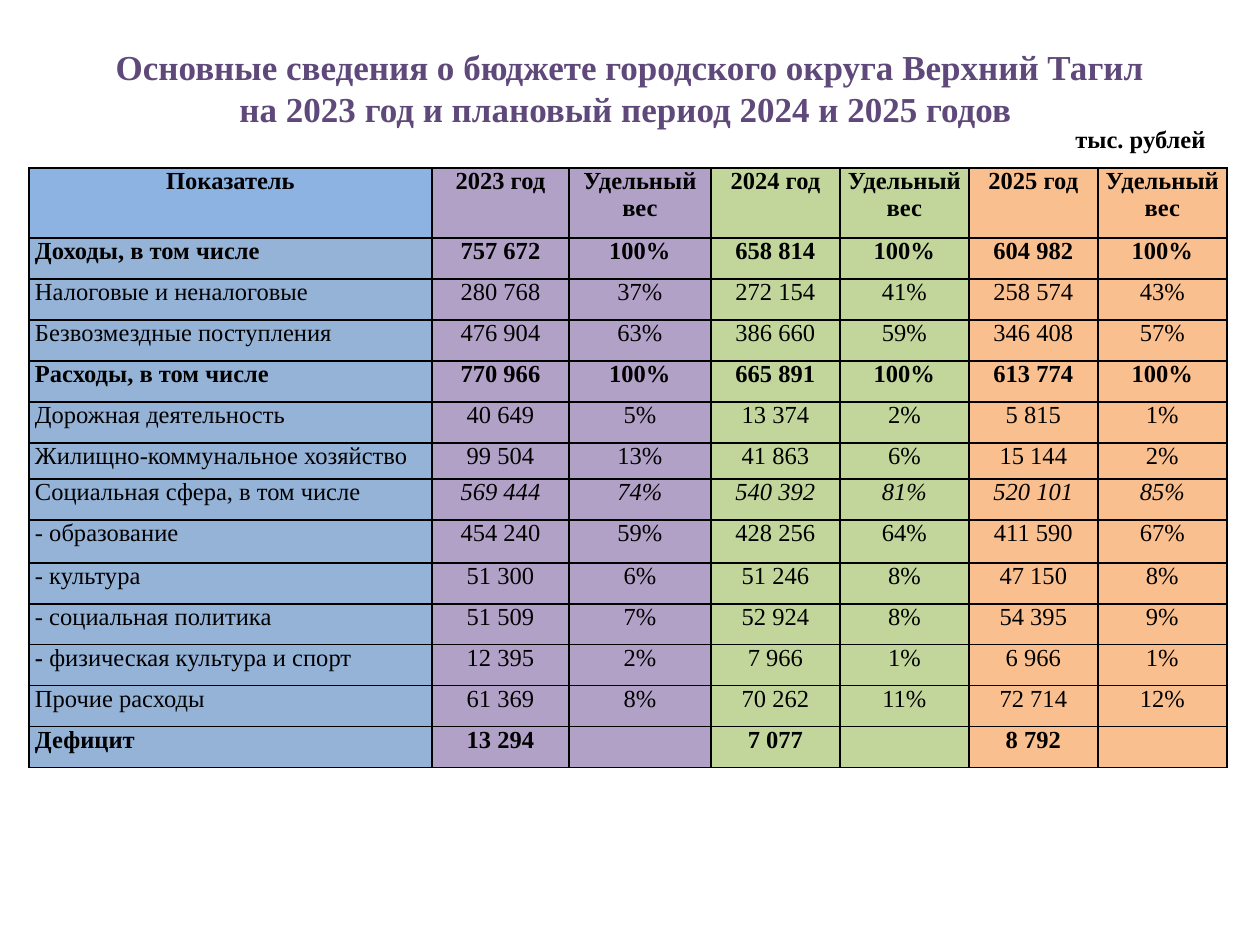
from dataclasses import dataclass

from lxml import etree
from pptx import Presentation
from pptx import util as u
from pptx.dml.color import RGBColor
from pptx.enum import text
from pptx.oxml.ns import qn

PX = 914400 / 126


@dataclass(frozen=True)
class Theme:
    """Colours, font and type sizes of the slide."""
    font: str = "Times New Roman"
    title: str = "5F497A"
    ink: str = "000000"
    head: str = "8DB3E2"
    label: str = "95B3D7"
    years: tuple = ("B2A1C7", "C2D69B", "FABF8F")
    title_pt: int = 20
    body_pt: int = 14
    border_pt: int = 1


T = Theme()
TITLE = ["Основные сведения о бюджете городского округа Верхний Тагил",
         "на 2023 год и плановый период 2024 и 2025 годов "]
COLS = [403, 137, 142] + [129] * 4
ROWS = [70] + [41] * 5 + [36, 41, 43] + [41] * 5
SHARE = "Удельный вес"
DATA = [
    ("b", "Показатель", "2023 год", SHARE, "2024 год", SHARE, "2025 год", SHARE),
    ("b", "Доходы, в том числе", "757 672", "100%", "658 814", "100%", "604 982", "100%"),
    ("", "Налоговые и неналоговые", "280 768", "37%", "272 154", "41%", "258 574", "43%"),
    ("", "Безвозмездные поступления", "476 904", "63%", "386 660", "59%", "346 408", "57%"),
    ("b", "Расходы, в том числе", "770 966", "100%", "665 891", "100%", "613 774", "100%"),
    ("", "Дорожная деятельность", "40 649", "5%", "13 374", "2%", "5 815", "1%"),
    ("", "Жилищно-коммунальное хозяйство", "99 504", "13%", "41 863", "6%", "15 144", "2%"),
    ("i", "Социальная сфера, в том числе", "569 444", "74%", "540 392", "81%", "520 101", "85%"),
    ("", "- образование", "454 240", "59%", "428 256", "64%", "411 590", "67%"),
    ("", "- культура", "51 300", "6%", "51 246", "8%", "47 150", "8%"),
    ("", "- социальная политика", "51 509", "7%", "52 924", "8%", "54 395", "9%"),
    ("dash", "- физическая культура и спорт", "12 395", "2%", "7 966", "1%", "6 966", "1%"),
    ("", "Прочие расходы", "61 369", "8%", "70 262", "11%", "72 714", "12%"),
    ("b", "Дефицит", "13 294", "", "7 077", "", "8 792", ""),
]


def px(n):
    """Turn pixels into EMU."""
    return u.Emu(round(n * PX))


def add_run(p, words, size, color, bold=False, italic=False):
    """Add one styled run to a paragraph."""
    r = p.add_run()
    r.text = words
    f = r.font
    f.name, f.size, f.bold, f.italic = T.font, u.Pt(size), bold, italic
    f.color.rgb = RGBColor.from_string(color)


def add_title(s, x, y, w, h):
    """Place the two-line heading at the bottom of its box."""
    tf = s.shapes.add_textbox(px(x), px(y), px(w), px(h)).text_frame
    tf.word_wrap = True
    tf.vertical_anchor = text.MSO_ANCHOR.BOTTOM
    for i, line in enumerate(TITLE):
        p = tf.add_paragraph() if i else tf.paragraphs[0]
        p.alignment = text.PP_ALIGN.CENTER
        add_run(p, line, T.title_pt, T.title, bold=True)


def add_unit(s, x, y, w, h):
    """Place the unit of measure above the table."""
    tf = s.shapes.add_textbox(px(x), px(y), px(w), px(h)).text_frame
    tf.word_wrap = False
    add_run(tf.paragraphs[0], "тыс. рублей", T.body_pt, T.ink, bold=True)


def style_cell(cell, color):
    """Give a cell its insets, borders and fill."""
    cell.margin_left = cell.margin_right = px(6)
    cell.margin_top = cell.margin_bottom = 0
    tcPr = cell._tc.get_or_add_tcPr()
    for side in ("lnL", "lnR", "lnT", "lnB"):
        ln = etree.SubElement(tcPr, qn(f"a:{side}"), w=str(u.Pt(T.border_pt)))
        fill = etree.SubElement(ln, qn("a:solidFill"))
        etree.SubElement(fill, qn("a:srgbClr"), val=T.ink)
    cell.fill.solid()
    cell.fill.fore_color.rgb = RGBColor.from_string(color)


def fill_cell(cell, words, style, is_label, centred):
    """Write the text of one cell in the style of its row."""
    p = cell.text_frame.paragraphs[0]
    p.font.size = u.Pt(T.body_pt)
    if centred:
        p.alignment = text.PP_ALIGN.CENTER
    if style == "dash" and is_label:
        add_run(p, words[:2], T.body_pt, T.ink, bold=True)
        words = words[2:]
    if words:
        add_run(p, words, T.body_pt, T.ink, style == "b", style == "i" and not is_label)


def add_budget_table(s, x, y):
    """Place the budget table with a colour for each year."""
    tbl = s.shapes.add_table(len(ROWS), len(COLS), px(x), px(y),
                             px(sum(COLS)), px(sum(ROWS))).table
    tbl.first_row = tbl.horz_banding = False
    for col, w in zip(tbl.columns, COLS):
        col.width = px(w)
    for i, (style, *values) in enumerate(DATA):
        tbl.rows[i].height = px(ROWS[i])
        for j, words in enumerate(values):
            cell = tbl.cell(i, j)
            label = T.label if i else T.head
            style_cell(cell, T.years[(j - 1) // 2] if j else label)
            fill_cell(cell, words, style, j == 0, i == 0 or j > 0)


def main():
    """Build and save the budget slide."""
    prs = Presentation()
    prs.slide_width, prs.slide_height = px(1260), px(945)
    s = prs.slides.add_slide(prs.slide_layouts[6])
    add_title(s, 0, 0, 1260, 136)
    add_budget_table(s, 29, 168)
    add_unit(s, 1063, 118, 156, 43)
    prs.save("out.pptx")


if __name__ == "__main__":
    main()
